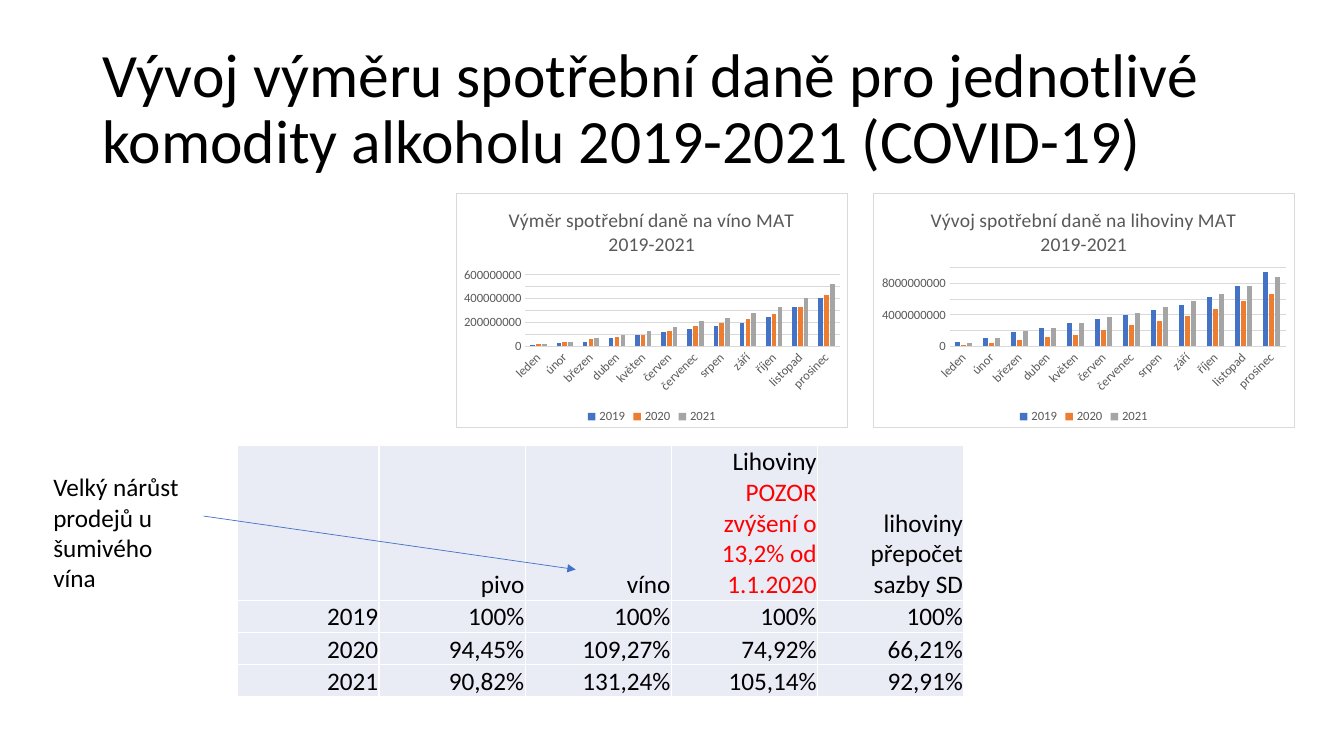
"""Build the slide on excise duty assessed on alcohol in 2019-2021."""
from pptx import Presentation
from pptx.chart.data import CategoryChartData
from pptx.dml.color import RGBColor
from pptx.enum.chart import XL_CHART_TYPE, XL_LEGEND_POSITION as LEGEND, XL_TICK_MARK as TICK
from pptx.enum.shapes import MSO_CONNECTOR
from pptx.enum.text import MSO_ANCHOR as ANCHOR, MSO_AUTO_SIZE as AUTO, PP_ALIGN as ALIGN
from pptx.oxml import parse_xml
from pptx.oxml.ns import nsdecls, qn
from pptx.util import Inches, Pt

FONT = "Calibri"
BLACK = RGBColor(0x00, 0x00, 0x00)
RED = RGBColor(0xFF, 0x00, 0x00)
GREY = RGBColor(0x59, 0x59, 0x59)
RULE = RGBColor(0xD9, 0xD9, 0xD9)
CELL = RGBColor(0xE9, 0xEB, 0xF5)
BLUE = RGBColor(0x44, 0x72, 0xC4)
ORANGE = RGBColor(0xED, 0x7D, 0x31)
SILVER = RGBColor(0xA5, 0xA5, 0xA5)

MONTHS = ["leden", "únor", "březen", "duben", "květen", "červen", "červenec",
          "srpen", "září", "říjen", "listopad", "prosinec"]
YEARS = [("2019", BLUE), ("2020", ORANGE), ("2021", SILVER)]
WINE = [[1, 3, 4, 7, 10, 12, 15, 17, 20, 25, 33, 41],
        [2, 4, 6, 8, 10, 13, 17, 20, 23, 27, 33, 43],
        [2, 4, 7, 10, 13, 16, 21, 24, 28, 33, 41, 52]]
SPIRITS = [[6, 11, 18, 24, 30, 35, 40, 46, 53, 63, 77, 94],
           [2, 5, 8, 12, 15, 21, 27, 32, 39, 47, 57, 67],
           [5, 11, 19, 24, 30, 37, 43, 50, 57, 66, 77, 88]]
CHARTS = [
    ("Výměr spotřební daně na víno MAT 2019-2021", 4.52, 3.89, WINE, 10**7, 6 * 10**8, 10**8),
    ("Vývoj spotřební daně na lihoviny MAT 2019-2021", 8.66, 4.18, SPIRITS, 10**8, 10**10, 2 * 10**9),
]
ROWS = [
    ["", "pivo", "víno", "Lihoviny ", "lihoviny přepočet sazby SD"],
    ["2019", "100%", "100%", "100%", "100%"],
    ["2020", "94,45%", "109,27%", "74,92%", "66,21%"],
    ["2021", "90,82%", "131,24%", "105,14%", "92,91%"],
]


def style(font, size, color):
    font.name = FONT
    font.size = Pt(size)
    font.bold = False
    font.color.rgb = color


prs = Presentation()
prs.slide_width = Inches(13.33)
prs.slide_height = Inches(7.5)
s = prs.slides.add_slide(prs.slide_layouts[5])

title = s.shapes.title
title.left, title.top, title.width, title.height = map(Inches, (0.92, 0.37, 11.5, 1.45))
tf = title.text_frame
tf.text = "Vývoj výměru spotřební daně pro jednotlivé komodity alkoholu 2019-2021 (COVID-19)"
tf.word_wrap = True
tf.auto_size = AUTO.NONE
tf.vertical_anchor = ANCHOR.MIDDLE
p = tf.paragraphs[0]
p.alignment = ALIGN.LEFT
p.line_spacing = 0.9
style(p.font, 44, BLACK)

for heading, left, width, series, scale, top_value, step in CHARTS:
    data = CategoryChartData()
    data.categories = MONTHS
    for (year, _), vals in zip(YEARS, series):
        data.add_series(year, [v * scale for v in vals])
    chart = s.shapes.add_chart(XL_CHART_TYPE.COLUMN_CLUSTERED, Inches(left), Inches(1.91),
                               Inches(width), Inches(2.34), data).chart
    style(chart.font, 10, BLACK)
    chart.has_title = True
    chart.chart_title.include_in_layout = False
    chart.chart_title.text_frame.text = heading
    style(chart.chart_title.text_frame.paragraphs[0].font, 14, GREY)
    chart.has_legend = True
    chart.legend.position = LEGEND.BOTTOM
    chart.legend.include_in_layout = False
    style(chart.legend.font, 9, GREY)

    plot = chart.plots[0]
    plot.gap_width = 219
    plot.overlap = -27
    plot.vary_by_categories = False
    for ser, (_, color) in zip(plot.series, YEARS):
        ser.format.fill.solid()
        ser.format.fill.fore_color.rgb = color

    months, values = chart.category_axis, chart.value_axis
    for axis in (months, values):
        axis.major_tick_mark = axis.minor_tick_mark = TICK.NONE
        style(axis.tick_labels.font, 9, GREY)
    values.minimum_scale = 0
    values.maximum_scale = top_value
    values.major_unit = step
    values.has_major_gridlines = True
    values.format.line.fill.background()
    for line in (months.format.line, values.major_gridlines.format.line):
        line.color.rgb = RULE
        line.width = Pt(0.75)

    chart.element.find(qn("c:chart")).addnext(parse_xml(
        f'<c:spPr {nsdecls("c", "a")}><a:solidFill><a:srgbClr val="FFFFFF"/></a:solidFill>'
        f'<a:ln w="{Pt(0.75)}"><a:solidFill><a:srgbClr val="{RULE}"/></a:solidFill></a:ln></c:spPr>'))

table = s.shapes.add_table(4, 5, Inches(2.35), Inches(4.42), Inches(7.21), Inches(2.49)).table
table.first_row = False
table.horz_banding = False
for i, col in enumerate(table.columns):
    col.width = Inches(1.45 if i else 1.41)
for i, row in enumerate(table.rows):
    row.height = Inches(0.32 if i else 1.53)
for i, texts in enumerate(ROWS):
    for j, text in enumerate(texts):
        cell = table.cell(i, j)
        cell.fill.solid()
        cell.fill.fore_color.rgb = CELL
        cell.vertical_anchor = ANCHOR.BOTTOM
        cell.margin_left = cell.margin_right = cell.margin_top = Inches(0.01)
        cell.margin_bottom = 0
        cell.text = text
        p = cell.text_frame.paragraphs[0]
        p.alignment = ALIGN.RIGHT
        style(p.font, 18, BLACK)

r = table.cell(0, 3).text_frame.paragraphs[0].add_run()
r.text = "POZOR zvýšení o 13,2% od 1.1.2020"
r.font.color.rgb = RED

arrow = s.shapes.add_connector(MSO_CONNECTOR.STRAIGHT, Inches(2.02), Inches(5.12),
                               Inches(5.71), Inches(5.65))
arrow.line.color.rgb = BLUE
arrow.line.width = Pt(0.5)
arrow.line._get_or_add_ln().append(parse_xml(f'<a:tailEnd {nsdecls("a")} type="triangle"/>'))
arrow._element.spPr.append(parse_xml(f'<a:effectLst {nsdecls("a")}/>'))

note = s.shapes.add_textbox(Inches(0.43), Inches(4.63), Inches(1.55), Inches(1.31))
tf = note.text_frame
tf.word_wrap = True
tf.auto_size = AUTO.SHAPE_TO_FIT_TEXT
tf.text = "Velký nárůst prodejů u šumivého vína"
style(tf.paragraphs[0].font, 18, BLACK)

prs.save("out.pptx")
